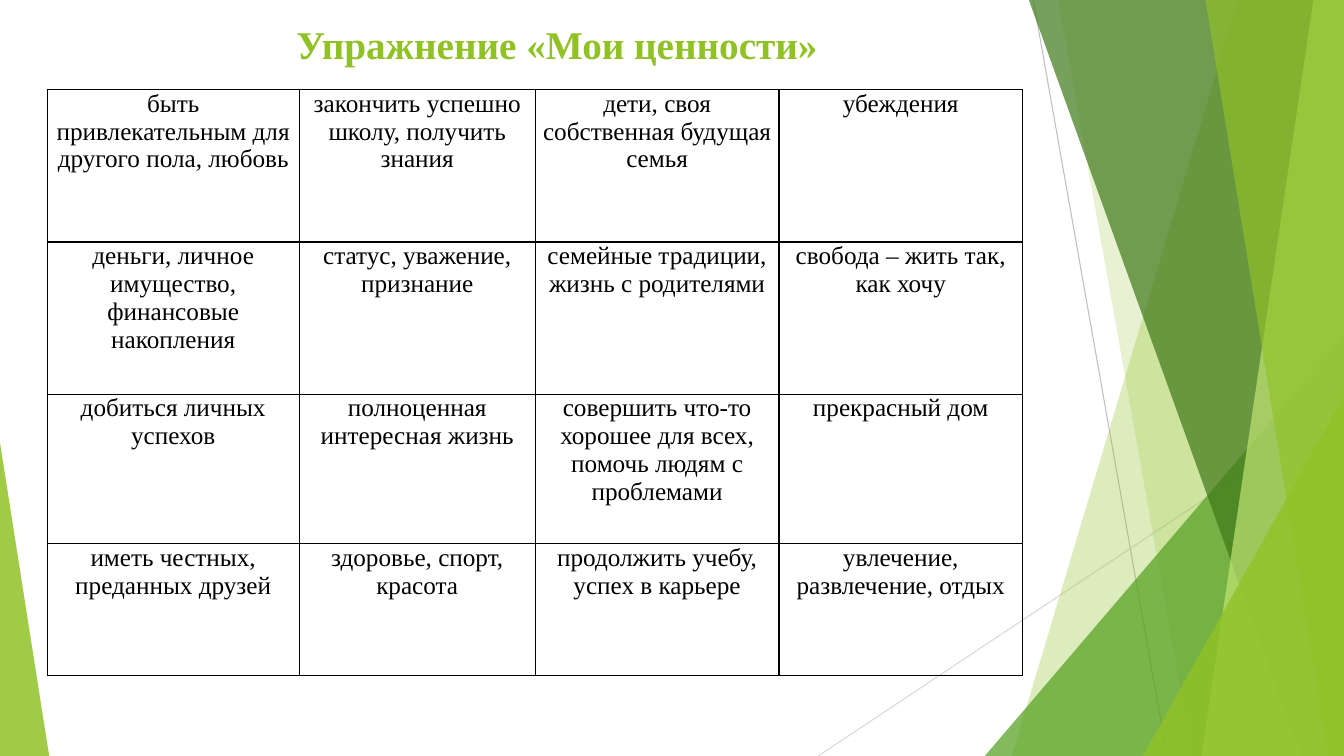
from lxml import etree
from pptx import Presentation
from pptx import util as u
from pptx.dml.color import RGBColor
from pptx.enum import shapes, text
from pptx.oxml import ns

COLORS = {
    "lime": "90C226", "green": "54A021", "forest": "3F7819", "pale": "C0E474",
    "grey": "BFBFBF", "light_grey": "D9D9D9", "black": "000000",
}
WIDTH, HEIGHT = 33.87, 19.05


class SlideBuilder:
    """Holds the style and the current slide; lengths are in centimetres."""
    font = "Times New Roman"

    def __init__(self, slide):
        self.slide = slide

    def color(self, name):
        return RGBColor.from_string(COLORS[name])

    def line(self, start, end, color):
        ends = [u.Cm(v) for v in (*start, *end)]
        line = self.slide.shapes.add_connector(shapes.MSO_CONNECTOR.STRAIGHT, *ends)
        line.line.color.rgb = self.color(color)
        line.line.width = u.Pt(0.75)
        etree.SubElement(line._element.spPr, ns.qn("a:effectLst"))

    def paint(self, shape, color, opacity):
        shape.shadow.inherit = False
        shape.line.fill.background()
        shape.fill.solid()
        shape.fill.fore_color.rgb = self.color(color)
        fill = shape._element.spPr.find(ns.qn("a:solidFill"))
        etree.SubElement(fill[0], ns.qn("a:alpha"), val=str(opacity * 1000))

    def band(self, top_x, bottom_x, color, opacity):
        """Full-height band from a slanted left edge to the slide's right side."""
        corners = [(top_x, 0), (WIDTH, 0), (WIDTH, HEIGHT), (bottom_x, HEIGHT)]
        points = [(u.Cm(x), u.Cm(y)) for x, y in corners]
        outline = self.slide.shapes.build_freeform(*points[0])
        outline.add_line_segments(points[1:], close=True)
        self.paint(outline.convert_to_shape(), color, opacity)

    def triangle(self, left, width, height, apex, color, opacity):
        """Triangle standing on the bottom of the slide."""
        box = [u.Cm(v) for v in (left, HEIGHT - height, width, height)]
        triangle = self.slide.shapes.add_shape(
            shapes.MSO_SHAPE.ISOSCELES_TRIANGLE, *box)
        triangle.adjustments[0] = apex
        self.paint(triangle, color, opacity)

    def add_words(self, frame, words, size, color, bold=False):
        paragraph = frame.paragraphs[0]
        paragraph.alignment = text.PP_ALIGN.CENTER
        run = paragraph.add_run()
        run.text = words
        run.font.name, run.font.size, run.font.bold = self.font, u.Pt(size), bold
        run.font.color.rgb = self.color(color)

    def title(self, words, left, top, width, height):
        box = self.slide.shapes.add_textbox(*map(u.Cm, (left, top, width, height)))
        box.text_frame.word_wrap = True
        self.add_words(box.text_frame, words, 28, "lime", bold=True)

    def borders(self, cell, color):
        properties = cell._tc.get_or_add_tcPr()
        for place, side in enumerate(("lnL", "lnR", "lnT", "lnB")):
            border = etree.Element(ns.qn(f"a:{side}"), w=str(u.Pt(1)))
            fill = etree.SubElement(border, ns.qn("a:solidFill"))
            etree.SubElement(fill, ns.qn("a:srgbClr"), val=COLORS[color])
            properties.insert(place, border)

    def table(self, rows, left, top, widths, heights):
        box = [u.Cm(v) for v in (left, top, sum(widths), sum(heights))]
        table = self.slide.shapes.add_table(len(rows), len(widths), *box).table
        table.first_row = table.horz_banding = False
        for column, width in zip(table.columns, widths):
            column.width = u.Cm(width)
        for row, height, phrases in zip(table.rows, heights, rows):
            row.height = u.Cm(height)
            for cell, phrase in zip(row.cells, phrases):
                cell.margin_left = cell.margin_right = u.Cm(0.18)
                cell.margin_top = cell.margin_bottom = 0
                cell.fill.background()
                self.borders(cell, "black")
                self.add_words(cell.text_frame, phrase, 18, "black")


VALUES = [
    ["быть привлекательным для другого пола, любовь",
     "закончить успешно школу, получить знания",
     "дети, своя собственная будущая семья",
     "убеждения"],
    ["деньги, личное имущество, финансовые накопления",
     "статус, уважение, признание",
     "семейные традиции, жизнь с родителями",
     "свобода – жить так, как хочу"],
    ["добиться личных успехов",
     "полноценная интересная жизнь",
     "совершить что-то хорошее для всех, помочь людям с проблемами",
     "прекрасный дом"],
    ["иметь честных, преданных друзей",
     "здоровье, спорт, красота",
     "продолжить учебу, успех в карьере",
     "увлечение, развлечение, отдых"],
]


def main():
    deck = Presentation()
    deck.slide_width, deck.slide_height = u.Cm(WIDTH), u.Cm(HEIGHT)
    builder = SlideBuilder(deck.slides.add_slide(deck.slide_layouts[6]))

    # Green facets, from back to front
    builder.line((26.04, 0), (29.41, HEIGHT), "grey")
    builder.line((WIDTH, 10.24), (20.62, HEIGHT), "light_grey")
    builder.band(31.19, 25.5, "lime", 30)
    builder.band(26.67, 30.05, "lime", 20)
    builder.triangle(24.82, 9.05, 10.59, 1, "green", 72)
    builder.band(25.93, 32.79, "forest", 70)
    builder.band(33.1, 30.28, "pale", 70)
    builder.band(30.38, 33.48, "lime", 65)
    builder.triangle(28.8, 5.07, 9.07, 1, "lime", 80)
    builder.triangle(0, 1.24, 7.9, 0, "lime", 85)

    # Table of values
    builder.table(VALUES, 1.19, 2.26,
                  widths=[6.35, 5.95, 6.14, 6.14],
                  heights=[3.84, 3.84, 3.76, 3.33])

    # Title
    builder.title("Упражнение «Мои ценности»", 0, 0.38, 28.07, 2.46)

    deck.save("out.pptx")


if __name__ == "__main__":
    main()
